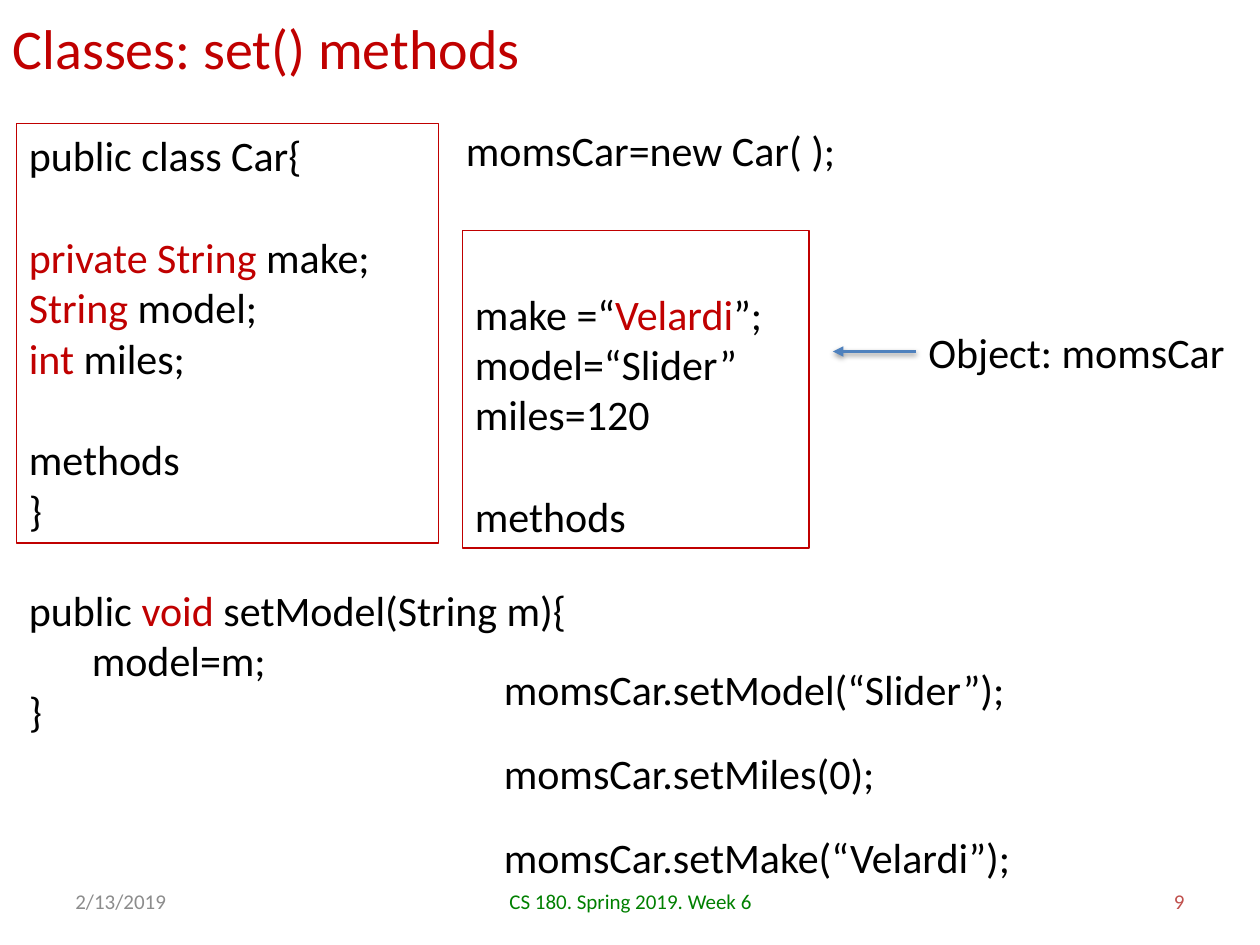
from dataclasses import dataclass

from lxml import etree
from pptx import Presentation
from pptx.dml.color import RGBColor
from pptx.enum import shapes as sh, text as tx
from pptx.oxml import parse_xml
from pptx.oxml.ns import nsdecls, qn
from pptx.util import Inches, Pt

RED, BLACK, BLUE = "C00000", "000000", "4F81BD"
FONT = "Calibri"
GAP = 29.3  # one line of 24 pt text
LEFT, MID, RIGHT = tx.PP_ALIGN.LEFT, tx.PP_ALIGN.CENTER, tx.PP_ALIGN.RIGHT


@dataclass
class Run:
    text: str
    color: str = BLACK


@dataclass
class Line:
    runs: list[Run]
    gap: float = 0  # points above
    indent: float = 0  # inches


@dataclass
class Box:
    left: float
    top: float
    width: float
    height: float
    lines: list[Line]
    framed: bool = False
    wrap: bool = False
    inset: float = 0.05


@dataclass
class Foot:
    left: float
    width: float
    run: Run
    align: tx.PP_ALIGN


def paint(target, color: str) -> None:
    """Color a font or a fill."""
    if hasattr(target, "solid"):
        target.solid()
        target.fore_color.rgb = RGBColor.from_string(color)
    else:
        target.color.rgb = RGBColor.from_string(color)


def write(frame, lines: list[Line], size: float = 24, align=LEFT) -> None:
    for i, line in enumerate(lines):
        para = frame.paragraphs[0] if i == 0 else frame.add_paragraph()
        para.alignment = align
        if line.gap:
            para.space_before = Pt(line.gap)
        if line.indent:
            props = para._p.get_or_add_pPr()
            props.set("marL", str(Inches(line.indent)))
            props.set("indent", "0")
        for part in line.runs:
            run = para.add_run()
            run.text = part.text
            run.font.name = FONT
            run.font.size = Pt(size)
            paint(run.font, part.color)


def draw_box(host, box: Box):
    place = [Inches(v) for v in (box.left, box.top, box.width, box.height)]
    if box.framed:
        shape = host.add_shape(sh.MSO_SHAPE.RECTANGLE, *place)
        shape.shadow.inherit = False
        shape.fill.background()
        paint(shape.line.fill, RED)
        shape.line.width = Pt(0.75)
    else:
        shape = host.add_textbox(*place)
    frame = shape.text_frame
    frame.word_wrap = box.wrap
    frame.auto_size = tx.MSO_AUTO_SIZE.SHAPE_TO_FIT_TEXT
    frame.vertical_anchor = tx.MSO_ANCHOR.TOP
    frame.margin_top = Inches(box.inset)
    write(frame, box.lines)
    return shape


def draw_arrow(host, label, end: float) -> None:
    """Arrow from the left side of the label to the given x."""
    y = label.top + label.height // 2
    arrow = host.add_connector(sh.MSO_CONNECTOR.STRAIGHT, label.left, y, Inches(end), y)
    arrow.begin_connect(label, 1)
    paint(arrow.line.fill, BLUE)
    arrow.line.width = Pt(2)
    etree.SubElement(arrow.line._get_or_add_ln(), qn("a:tailEnd"), type="triangle")
    arrow._element.spPr.append(parse_xml(
        f'<a:effectLst {nsdecls("a")}><a:outerShdw blurRad="{Pt(3.1)}" '
        f'dist="{Pt(1.6)}" dir="5400000" rotWithShape="0"><a:srgbClr val="{BLACK}">'
        '<a:alpha val="38000"/></a:srgbClr></a:outerShdw></a:effectLst>'))


def draw_foot(host, foot: Foot) -> None:
    shape = host.add_textbox(Inches(foot.left), Inches(6.95), Inches(foot.width), Inches(0.4))
    shape.text_frame.word_wrap = True
    shape.text_frame.vertical_anchor = tx.MSO_ANCHOR.MIDDLE
    write(shape.text_frame, [Line([foot.run])], 12, foot.align)


def draw_title(title, text: str) -> None:
    title.left, title.top = Inches(0), Inches(0.03)
    title.width, title.height = Inches(7.23), Inches(0.69)
    title.text_frame.vertical_anchor = tx.MSO_ANCHOR.MIDDLE
    write(title.text_frame, [Line([Run(text, RED)])], 32)


CLASS = Box(0.13, 0.98, 3.35, 3.33, [
    Line([Run("public class Car{")]),
    Line([Run("private String", RED), Run(" make;")], gap=GAP),
    Line([Run("String", RED), Run(" model;")]),
    Line([Run("int", RED), Run(" miles;")]),
    Line([Run("methods")], gap=GAP),
    Line([Run("}")]),
], framed=True, wrap=True)

OBJECT = Box(3.67, 1.83, 2.75, 2.52, [
    Line([Run("make =“"), Run("Velardi", RED), Run("”;")]),
    Line([Run("model=“Slider”")]),
    Line([Run("miles=120")]),
    Line([Run("methods")], gap=GAP),
], framed=True, wrap=True, inset=0.05 + GAP / 72)

SETTER = Box(0.13, 4.59, 4.51, 1.31, [
    Line([Run("public "), Run("void ", RED), Run("setModel(String m){")]),
    Line([Run("model=m;")], indent=0.5),
    Line([Run("}")]),
])

NEW = Box(3.6, 0.94, 3.16, 0.5, [Line([Run("momsCar=new Car( );")])])
LABEL = Box(7.27, 2.54, 2.57, 0.5, [Line([Run("Object: momsCar")])])

CALLS = [
    ("momsCar.setModel(“Slider”);", 4.47),
    ("momsCar.setMiles(0);", 3.25),
    ("momsCar.setMake(“Velardi”);", 4.28),
]

FEET = [
    Foot(0.5, 2.33, Run("2/13/2019", "8C8C8C"), LEFT),
    Foot(3.42, 3.17, Run("CS 180. Spring 2019. Week 6", "008000"), MID),
    Foot(7.17, 2.33, Run("9", "C0504D"), RIGHT),
]


def main() -> None:
    deck = Presentation()
    deck.slide_width, deck.slide_height = Inches(10), Inches(7.5)
    slide = deck.slides.add_slide(deck.slide_layouts[5])
    host = slide.shapes
    draw_title(host.title, "Classes: set() methods")
    draw_box(host, CLASS)
    draw_box(host, NEW)
    group = host.add_group_shape().shapes
    draw_box(group, OBJECT)
    draw_arrow(group, draw_box(group, LABEL), 6.61)
    for foot in FEET:
        draw_foot(host, foot)
    for i, (call, width) in enumerate(CALLS):
        draw_box(host, Box(3.9, 5.22 + 0.665 * i, width, 0.5, [Line([Run(call)])]))
    draw_box(host, SETTER)
    deck.save("out.pptx")


if __name__ == "__main__":
    main()
